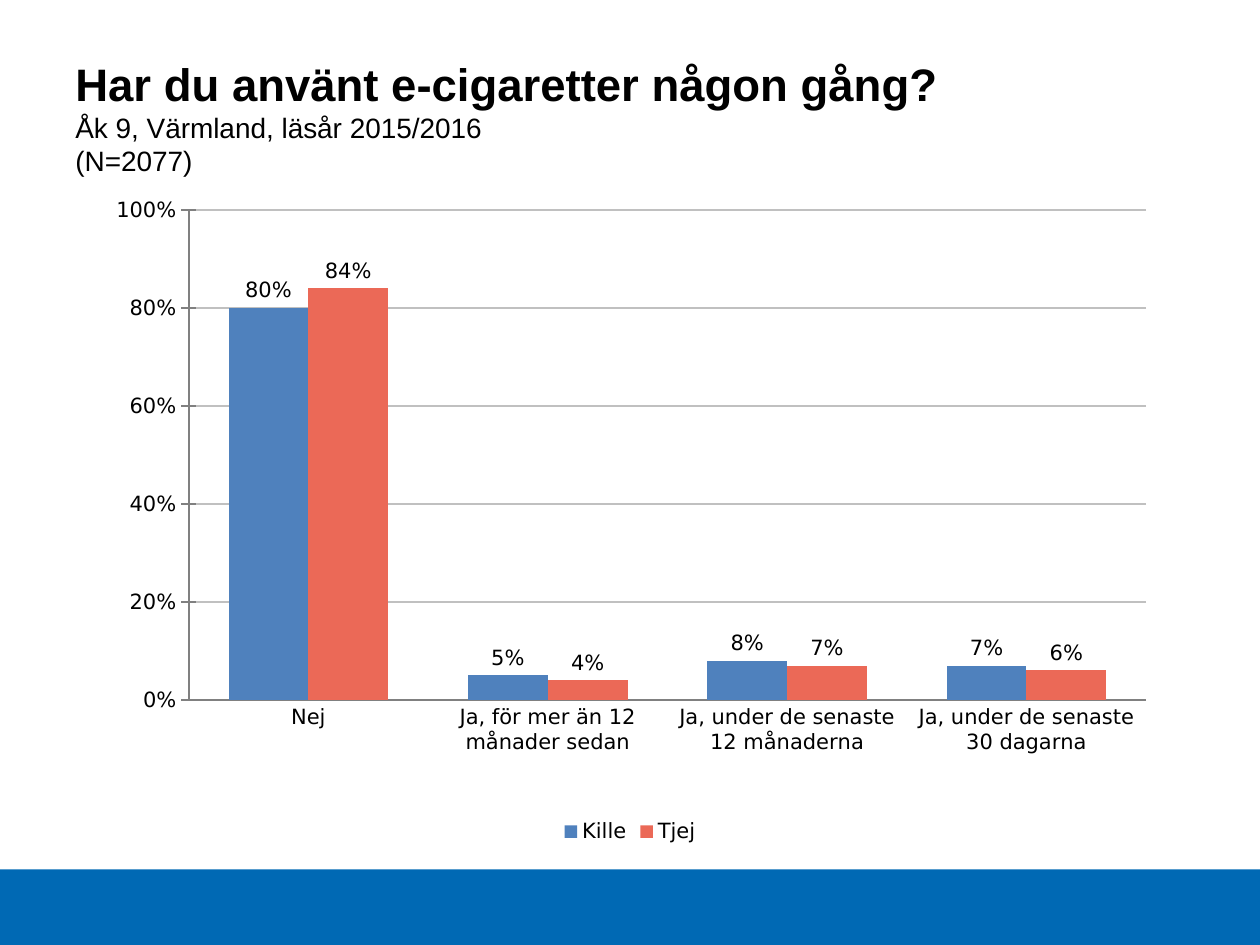
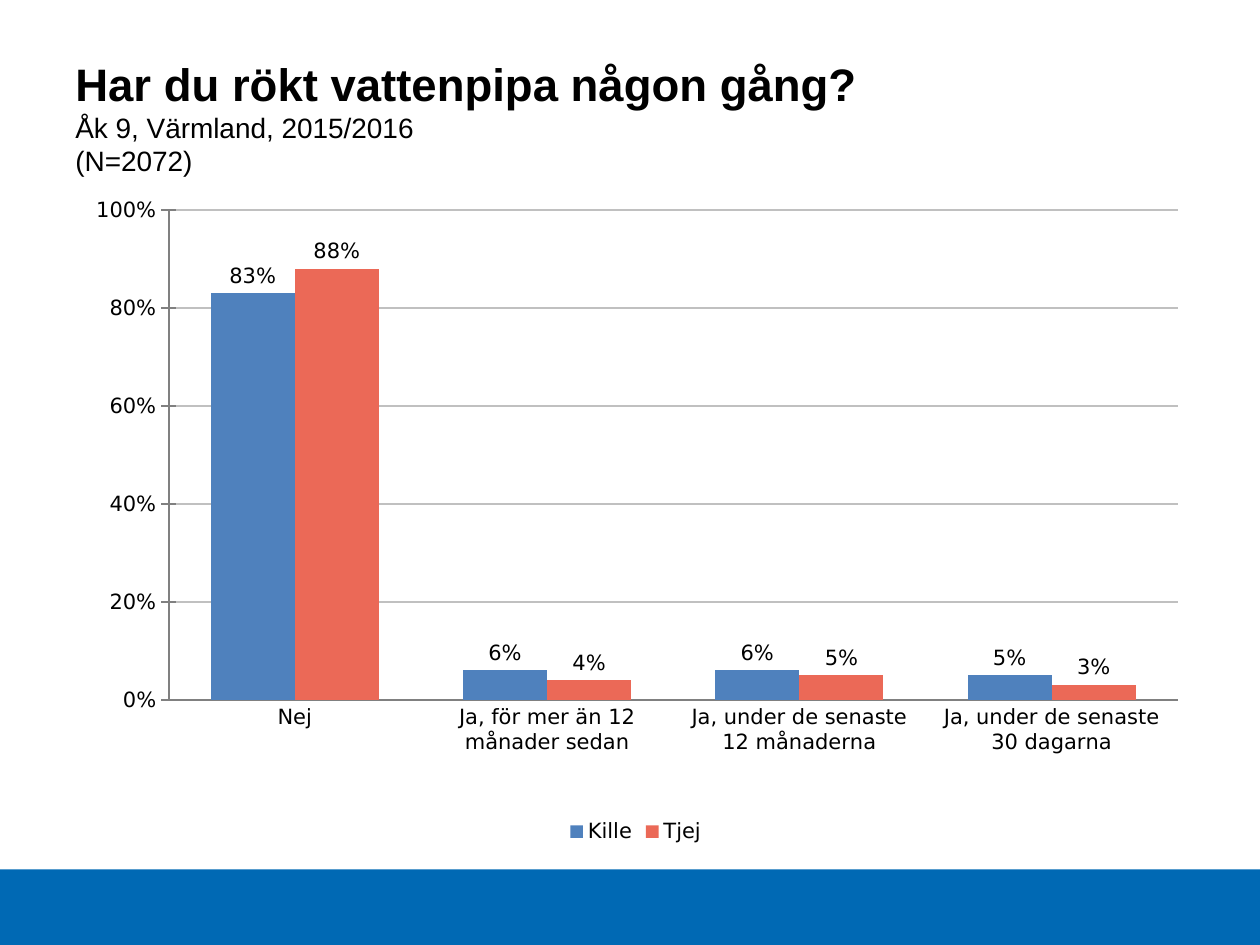
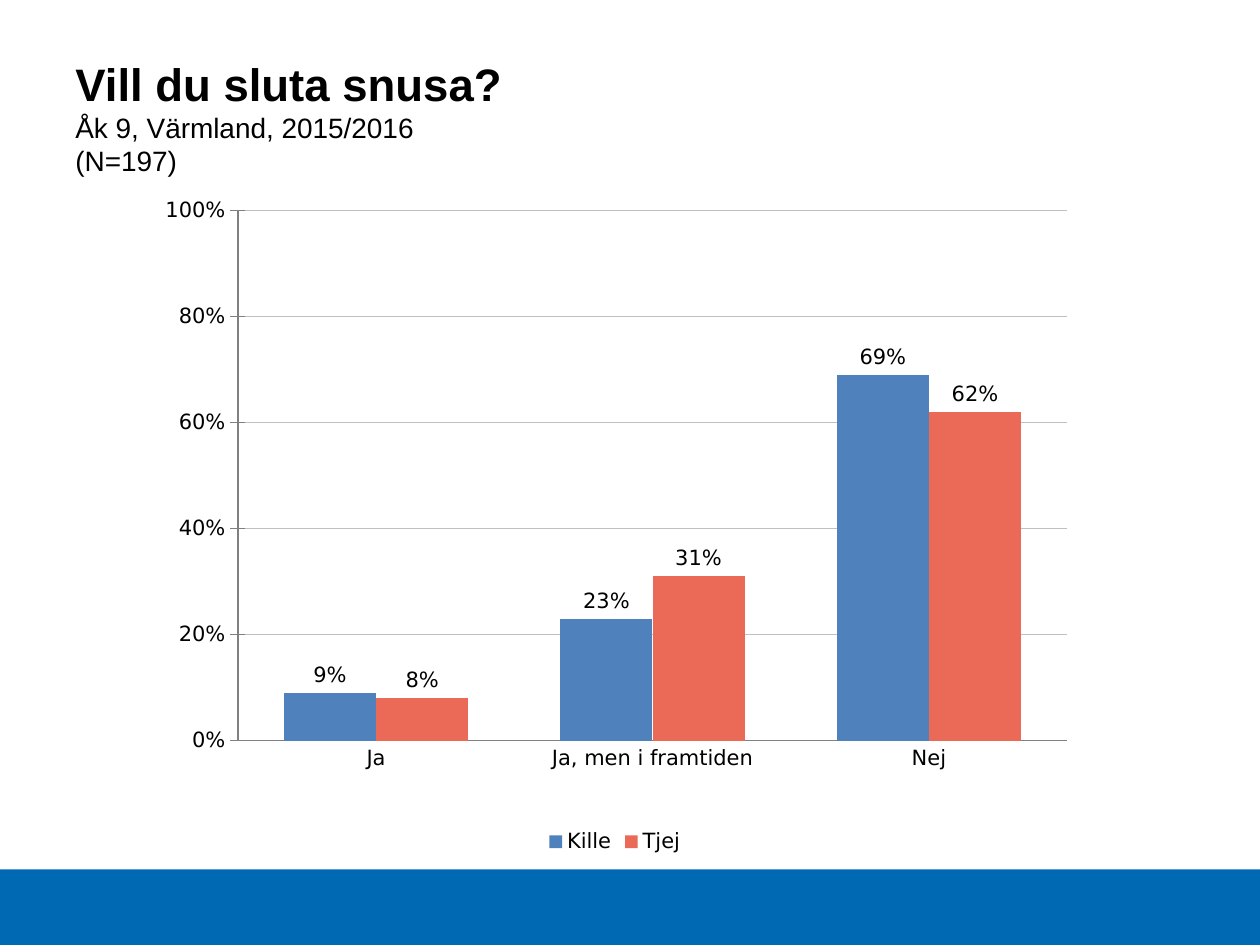
"""Builds three survey slides, each with a heading, a column chart and a footer band."""
from dataclasses import dataclass

import lxml.etree
import pptx
import pptx.chart.data
import pptx.dml.color
import pptx.enum.chart
import pptx.enum.shapes
import pptx.enum.text
import pptx.oxml.ns
import pptx.util

Inches = pptx.util.Inches
Pt = pptx.util.Pt


@dataclass(frozen=True)
class Theme:
    band: str = "0069B4"
    text: str = "000000"
    grid: str = "C0C0C0"
    axis: str = "808080"
    series: tuple = ("4F81BD", "EB6957")
    heading_font: str = "Arial"
    chart_font: str = "DejaVu Sans"
    title_size: int = 26
    subtitle_size: int = 16
    chart_size: int = 12


THEME = Theme()
SERIES_NAMES = ("Kille", "Tjej")
USE_ANSWERS = (
    "Nej",
    "Ja, för mer än 12 månader sedan",
    "Ja, under de senaste 12 månaderna",
    "Ja, under de senaste 30 dagarna",
)
QUESTIONS = [
    {
        "title": "Har du använt e-cigaretter någon gång?",
        "subtitles": ("Åk 9, Värmland, läsår 2015/2016", "(N=2077)"),
        "answers": USE_ANSWERS,
        "shares": ((0.80, 0.05, 0.08, 0.07), (0.84, 0.04, 0.07, 0.06)),
        "frame": (0.75, 1.5, 8.5, 5.24),
        "plot": (1.5, 1.67, 7.6, 3.89),
    },
    {
        "title": "Har du rökt vattenpipa någon gång?",
        "subtitles": ("Åk 9, Värmland, 2015/2016", "(N=2072)"),
        "answers": USE_ANSWERS,
        "shares": ((0.83, 0.06, 0.06, 0.05), (0.88, 0.04, 0.05, 0.03)),
        "frame": (0.59, 1.5, 8.91, 5.24),
        "plot": (1.34, 1.67, 8.01, 3.89),
    },
    {
        "title": "Vill du sluta snusa?",
        "subtitles": ("Åk 9, Värmland, 2015/2016", "(N=197)"),
        "answers": ("Ja", "Ja, men i framtiden", "Nej"),
        "shares": ((0.09, 0.23, 0.69), (0.08, 0.31, 0.62)),
        "frame": (1.14, 1.5, 7.48, 5.32),
        "plot": (1.89, 1.67, 6.58, 4.21),
    },
]


def color(value):
    return pptx.dml.color.RGBColor.from_string(value)


def style_font(font, name, size, bold=False):
    font.name = name
    font.size = Pt(size)
    font.bold = bold
    font.color.rgb = color(THEME.text)


def add_band(slide):
    band = slide.shapes.add_shape(
        pptx.enum.shapes.MSO_SHAPE.RECTANGLE, Inches(0), Inches(6.9), Inches(10), Inches(0.6)
    )
    band.shadow.inherit = False
    band.fill.solid()
    band.fill.fore_color.rgb = color(THEME.band)
    band.line.fill.background()


def add_heading(slide, title, subtitles):
    heading = slide.shapes.add_textbox(Inches(0.5), Inches(0.3), Inches(8.66), Inches(1.25))
    frame = heading.text_frame
    frame.word_wrap = True
    frame.vertical_anchor = pptx.enum.text.MSO_ANCHOR.MIDDLE
    frame.text = "\n".join((title, *subtitles))
    for index, paragraph in enumerate(frame.paragraphs):
        size = THEME.subtitle_size if index else THEME.title_size
        style_font(paragraph.font, THEME.heading_font, size, bold=index == 0)


def place_plot(chart, frame, plot):
    left, top, width, height = frame
    fractions = {
        "x": (plot[0] - left) / width,
        "y": (plot[1] - top) / height,
        "w": plot[2] / width,
        "h": plot[3] / height,
    }
    qn = pptx.oxml.ns.qn
    area = chart._chartSpace.find(".//" + qn("c:plotArea"))
    for old_layout in area.findall(qn("c:layout")):
        area.remove(old_layout)
    layout = lxml.etree.Element(qn("c:layout"))
    manual = lxml.etree.SubElement(layout, qn("c:manualLayout"))
    settings = {"layoutTarget": "inner", "xMode": "edge", "yMode": "edge"}
    settings.update({key: f"{value:.3f}" for key, value in fractions.items()})
    for key, value in settings.items():
        lxml.etree.SubElement(manual, qn("c:" + key)).set("val", value)
    area.insert(0, layout)


def style_axes(chart):
    tick_mark = pptx.enum.chart.XL_TICK_MARK
    for axis, mark in ((chart.category_axis, tick_mark.NONE), (chart.value_axis, tick_mark.CROSS)):
        axis.major_tick_mark = mark
        axis.minor_tick_mark = tick_mark.NONE
        axis.format.line.color.rgb = color(THEME.axis)
        axis.format.line.width = Pt(1)
        style_font(axis.tick_labels.font, THEME.chart_font, THEME.chart_size)
    axis = chart.value_axis
    axis.minimum_scale, axis.maximum_scale, axis.major_unit = 0, 1, 0.2
    axis.tick_labels.number_format = "0%"
    axis.tick_labels.number_format_is_linked = False
    axis.has_major_gridlines = True
    axis.major_gridlines.format.line.color.rgb = color(THEME.grid)
    axis.major_gridlines.format.line.width = Pt(1)


def style_series(plot):
    plot.gap_width = 100
    plot.overlap = 0
    plot.vary_by_categories = False
    for series, fill in zip(plot.series, THEME.series):
        series.format.fill.solid()
        series.format.fill.fore_color.rgb = color(fill)
        series.invert_if_negative = False
        labels = series.data_labels
        labels.show_value = True
        labels.number_format = "0%"
        labels.number_format_is_linked = False
        labels.position = pptx.enum.chart.XL_LABEL_POSITION.OUTSIDE_END
        style_font(labels.font, THEME.chart_font, THEME.chart_size)


def add_answer_chart(slide, question):
    data = pptx.chart.data.CategoryChartData(number_format="0%")
    data.categories = question["answers"]
    for name, shares in zip(SERIES_NAMES, question["shares"]):
        data.add_series(name, shares)
    chart = slide.shapes.add_chart(
        pptx.enum.chart.XL_CHART_TYPE.COLUMN_CLUSTERED, *map(Inches, question["frame"]), data
    ).chart
    style_font(chart.font, THEME.chart_font, THEME.chart_size)
    chart.has_title = False
    chart.has_legend = True
    chart.legend.position = pptx.enum.chart.XL_LEGEND_POSITION.BOTTOM
    chart.legend.include_in_layout = False
    style_font(chart.legend.font, THEME.chart_font, THEME.chart_size)
    style_axes(chart)
    style_series(chart.plots[0])
    place_plot(chart, question["frame"], question["plot"])


def main():
    presentation = pptx.Presentation()
    presentation.slide_width = Inches(10)
    presentation.slide_height = Inches(7.5)
    for question in QUESTIONS:
        slide = presentation.slides.add_slide(presentation.slide_layouts[6])
        add_band(slide)
        add_heading(slide, question["title"], question["subtitles"])
        add_answer_chart(slide, question)
    presentation.save("out.pptx")


if __name__ == "__main__":
    main()
